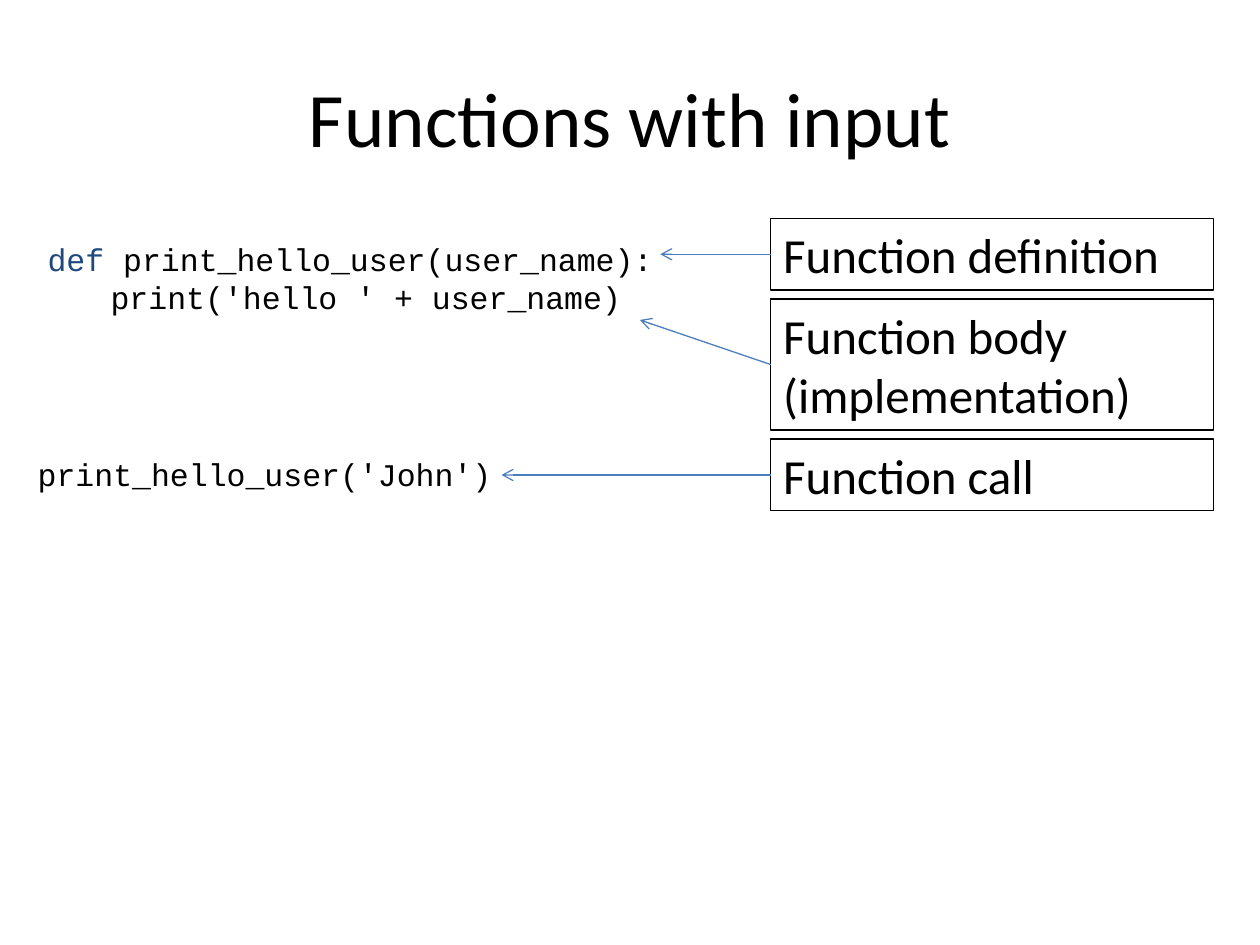
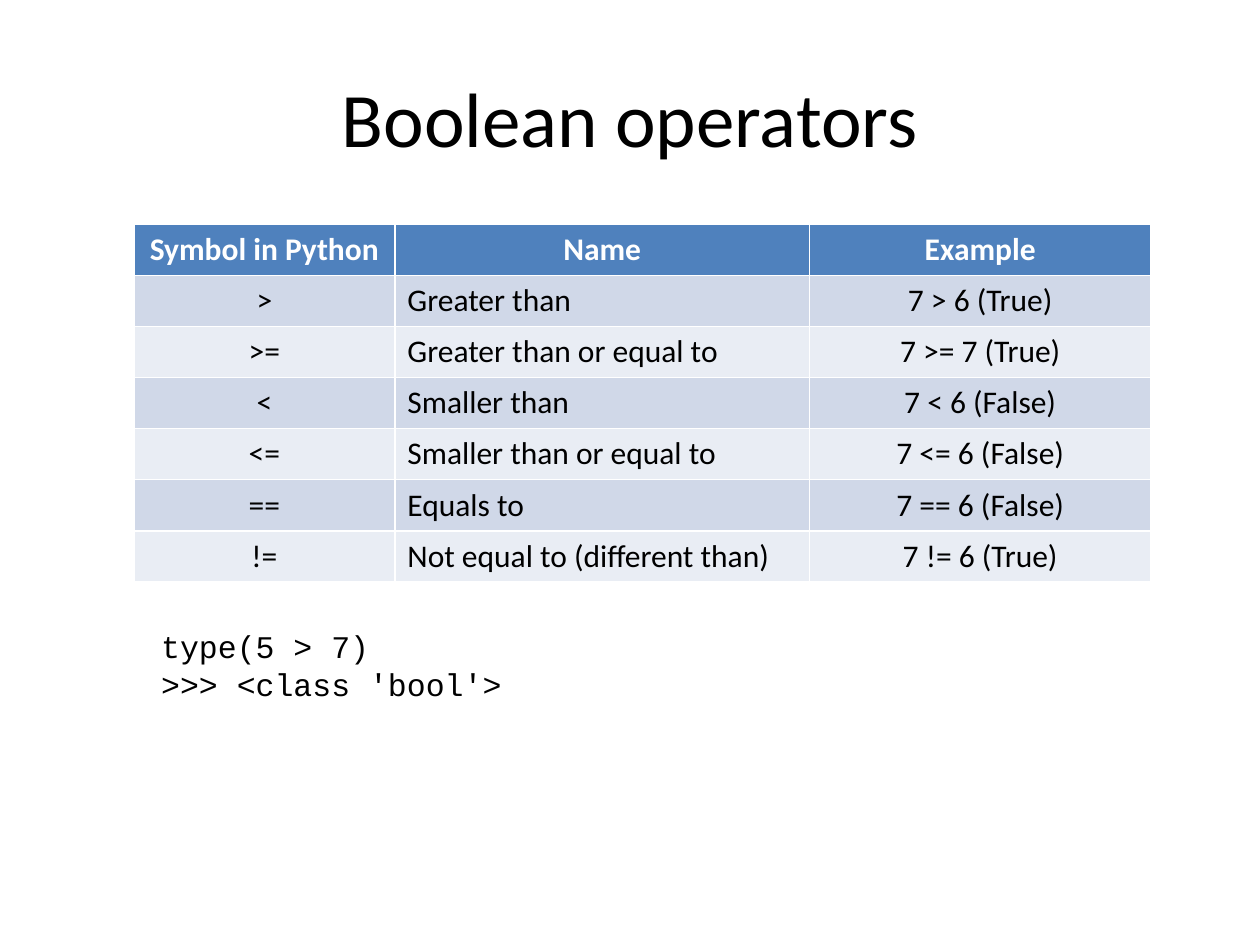
"""Build two Python lesson slides: functions with input and boolean operators."""
from lxml.etree import SubElement
from pptx import Presentation
from pptx.dml.color import RGBColor
from pptx.enum.shapes import MSO_CONNECTOR, MSO_SHAPE
from pptx.enum.text import MSO_ANCHOR, PP_ALIGN
from pptx.oxml.ns import qn
from pptx.util import Cm, Pt

BLACK = RGBColor(0x00, 0x00, 0x00)
WHITE = RGBColor(0xFF, 0xFF, 0xFF)
KEYWORD = RGBColor(0x1F, 0x49, 0x7D)
ARROW = RGBColor(0x4B, 0x7E, 0xBC)
HEADER_FILL = RGBColor(0x4F, 0x81, 0xBD)
BAND_FILLS = (RGBColor(0xD0, 0xD8, 0xE8), RGBColor(0xE9, 0xED, 0xF4))
TEXT_FONT, CODE_FONT = "Calibri", "Courier New"

FUNCTIONS_TITLE = "Functions with input"
DEFINITION_CODE = [
    [("def ", KEYWORD), ("print_hello_user(user_name):", BLACK)],
    [("\tprint('hello ' + user_name)", BLACK)],
]
CALL_CODE = [[("print_hello_user('John')", BLACK)]]
LABELS = [
    {"text": "Function definition", "height": 1.45, "target": (13.31, None)},
    {"text": "Function body (implementation)", "height": 2.64, "target": (12.9, 6.45)},
    {"text": "Function call", "height": 1.45, "target": (10.11, None)},
]
LABEL_LEFT, LABEL_TOP, LABEL_WIDTH, LABEL_GAP = 15.54, 4.4, 8.92, 0.18

OPERATORS_TITLE = "Boolean operators"
OPERATORS = [
    ("Symbol in Python", "Name", "Example"),
    (">", "Greater than", "7 > 6 (True)"),
    (">=", "Greater than or equal to", "7 >= 7 (True)"),
    ("<", "Smaller than", "7 < 6 (False)"),
    ("<=", "Smaller than or equal to", "7 <= 6 (False)"),
    ("==", "Equals to", "7 == 6 (False)"),
    ("!=", "Not equal to (different than)", "7 != 6 (True)"),
]
COLUMN_WIDTHS = (5.26, 8.36, 6.88)
ROW_HEIGHT = 1.03
NAME_COLUMN = 1
TYPE_CODE = [[("type(5 > 7)", BLACK)], [(">>> <class 'bool'>", BLACK)]]


def style_font(font, size, color, name=TEXT_FONT, bold=False):
    """Apply typeface, size, weight and colour to a font."""
    font.name, font.size, font.bold = name, Pt(size), bold
    font.color.rgb = color


def add_titled_slide(presentation, title):
    """Add a title-only slide with the shared title style."""
    slide = presentation.slides.add_slide(presentation.slide_layouts[5])
    shape = slide.shapes.title
    shape.left, shape.top, shape.width, shape.height = Cm(1.27), Cm(0.76), Cm(22.86), Cm(3.18)
    shape.text_frame.text = title
    shape.text_frame.vertical_anchor = MSO_ANCHOR.MIDDLE
    paragraph = shape.text_frame.paragraphs[0]
    paragraph.alignment = PP_ALIGN.CENTER
    style_font(paragraph.runs[0].font, 44, BLACK)
    return slide


def add_code(slide, lines, left, top, width, height):
    """Add a code listing made of lines of coloured runs."""
    box = slide.shapes.add_textbox(Cm(left), Cm(top), Cm(width), Cm(height))
    frame = box.text_frame
    frame.word_wrap = True
    for index, line in enumerate(lines):
        paragraph = frame.add_paragraph() if index else frame.paragraphs[0]
        for text, color in line:
            run = paragraph.add_run()
            run.text = text
            style_font(run.font, 18, color, CODE_FONT)


def add_label(slide, text, top, height):
    """Add an outlined label in the right-hand column."""
    shape = slide.shapes.add_shape(
        MSO_SHAPE.RECTANGLE, Cm(LABEL_LEFT), Cm(top), Cm(LABEL_WIDTH), Cm(height))
    shape.shadow.inherit = False
    shape.fill.background()
    shape.line.color.rgb = BLACK
    shape.line.width = Pt(0.75)
    frame = shape.text_frame
    frame.text = text
    frame.word_wrap = True
    frame.vertical_anchor = MSO_ANCHOR.TOP
    frame.paragraphs[0].alignment = PP_ALIGN.LEFT
    style_font(frame.paragraphs[0].runs[0].font, 28, BLACK)
    return shape


def add_arrow(slide, label, target_x, target_y):
    """Point from the label's left side to the code, level if no height is given."""
    middle = label.top + label.height // 2
    end_y = middle if target_y is None else Cm(target_y)
    arrow = slide.shapes.add_connector(
        MSO_CONNECTOR.STRAIGHT, label.left, middle, Cm(target_x), end_y)
    arrow.begin_connect(label, 1)
    arrow.line.color.rgb = ARROW
    arrow.line.width = Pt(0.75)
    SubElement(arrow.line._get_or_add_ln(), qn("a:tailEnd"), type="arrow")
    SubElement(arrow._element.spPr, qn("a:effectLst"))


def add_operator_table(slide, left, top):
    """Add the banded table of operators."""
    table = slide.shapes.add_table(
        len(OPERATORS), len(COLUMN_WIDTHS), Cm(left), Cm(top),
        Cm(sum(COLUMN_WIDTHS)), Cm(ROW_HEIGHT * len(OPERATORS))).table
    for column, width in zip(table.columns, COLUMN_WIDTHS):
        column.width = Cm(width)
    for row_index, values in enumerate(OPERATORS):
        is_header = row_index == 0
        table.rows[row_index].height = Cm(ROW_HEIGHT)
        for column_index, value in enumerate(values):
            cell = table.cell(row_index, column_index)
            cell.fill.solid()
            cell.fill.fore_color.rgb = HEADER_FILL if is_header else BAND_FILLS[(row_index - 1) % 2]
            cell.text_frame.text = value
            paragraph = cell.text_frame.paragraphs[0]
            is_name = column_index == NAME_COLUMN and not is_header
            paragraph.alignment = PP_ALIGN.LEFT if is_name else PP_ALIGN.CENTER
            style_font(paragraph.runs[0].font, 18, WHITE if is_header else BLACK, bold=is_header)


def build_functions_slide(presentation):
    """Show a function's definition, body and call with labels."""
    slide = add_titled_slide(presentation, FUNCTIONS_TITLE)
    add_code(slide, DEFINITION_CODE, 0.71, 4.72, 14.6, 2.57)
    add_code(slide, CALL_CODE, 0.51, 9.04, 14.6, 1.8)
    top = LABEL_TOP
    for label in LABELS:
        shape = add_label(slide, label["text"], top, label["height"])
        add_arrow(slide, shape, *label["target"])
        top += label["height"] + LABEL_GAP


def build_operators_slide(presentation):
    """Show the comparison operators and the type they return."""
    slide = add_titled_slide(presentation, OPERATORS_TITLE)
    add_operator_table(slide, 2.7, 4.52)
    add_code(slide, TYPE_CODE, 3, 12.52, 12.7, 1.8)


def main():
    """Build and save the presentation."""
    presentation = Presentation()
    presentation.slide_width, presentation.slide_height = Cm(25.4), Cm(19.05)
    build_functions_slide(presentation)
    build_operators_slide(presentation)
    presentation.save("out.pptx")


if __name__ == "__main__":
    main()
